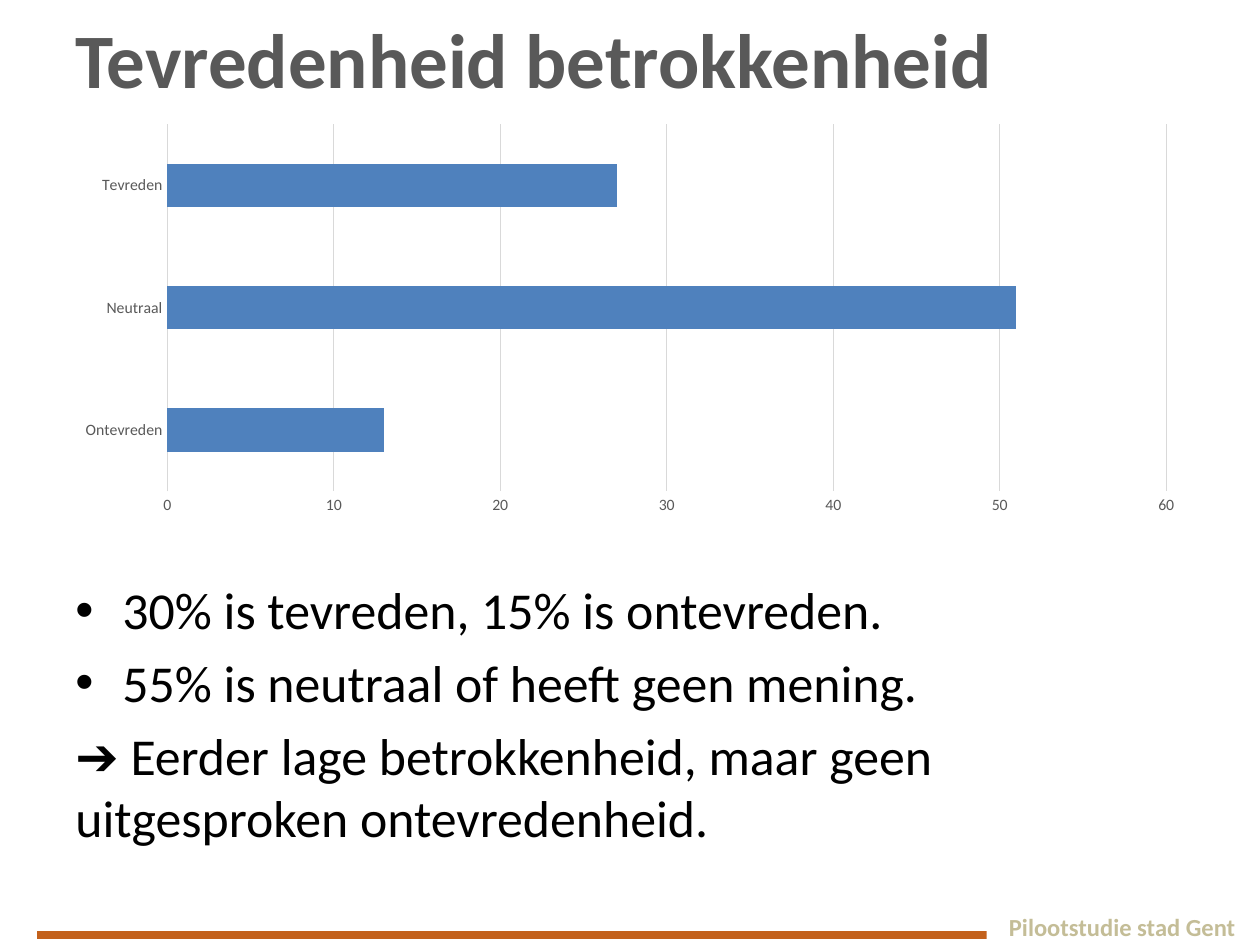
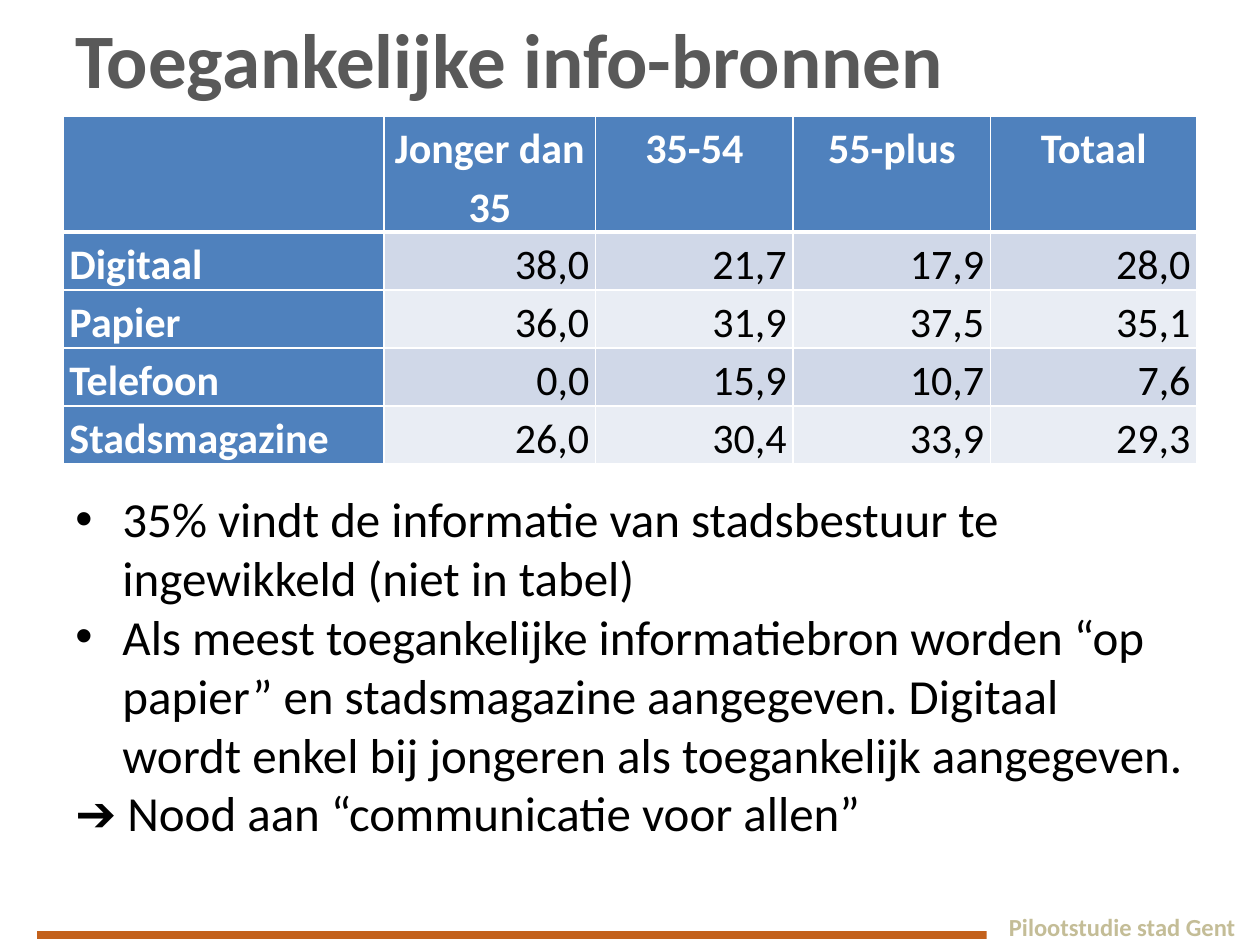
from dataclasses import dataclass

from lxml.etree import SubElement
from pptx import Presentation
from pptx.chart.data import CategoryChartData
from pptx.dml.color import RGBColor as RGB
from pptx.enum.chart import XL_CHART_TYPE as ChartType, XL_TICK_MARK as Tick
from pptx.enum.shapes import MSO_SHAPE as Shape
from pptx.enum.text import MSO_ANCHOR as Anchor, MSO_AUTO_SIZE as AutoSize, PP_ALIGN as Align
from pptx.oxml.ns import qn
from pptx.util import Cm, Pt


@dataclass(frozen=True)
class Theme:
    font: str = "Calibri"
    white: RGB = RGB(0xFF, 0xFF, 0xFF)
    black: RGB = RGB(0, 0, 0)
    grey: RGB = RGB(0x59, 0x59, 0x59)
    grid: RGB = RGB(0xD9, 0xD9, 0xD9)
    blue: RGB = RGB(0x4F, 0x81, 0xBD)
    orange: RGB = RGB(0xC3, 0x61, 0x1C)
    sand: RGB = RGB(0xC4, 0xBD, 0x97)
    bands: tuple = (RGB(0xD0, 0xD8, 0xE8), RGB(0xE9, 0xED, 0xF4))
    title_size: float = 44
    findings_size: float = 29.6
    sources_size: float = 28
    table_size: float = 24
    footer_size: float = 14
    axis_size: float = 9


theme = Theme()


def write(frame, *lines, size, color=theme.black, bold=False, align=Align.LEFT,
          anchor=Anchor.TOP, spacing=None, before=0, bullets=0, wrap=True):
    frame.word_wrap = wrap
    frame.vertical_anchor = anchor
    for index, line in enumerate(lines):
        paragraph = frame.add_paragraph() if index else frame.paragraphs[0]
        if index < bullets:
            properties = paragraph._p.get_or_add_pPr()
            properties.set("marL", str(Cm(0.95)))
            properties.set("indent", str(-Cm(0.95)))
            SubElement(properties, qn("a:buFont"), typeface="Arial")
            SubElement(properties, qn("a:buChar"), char="•")
        paragraph.alignment = align
        if spacing:
            paragraph.line_spacing = spacing
        if index and before:
            paragraph.space_before = Pt(before)
        run = paragraph.add_run()
        run.text = line
        run.font.name, run.font.size, run.font.bold = theme.font, Pt(size), bold
        run.font.color.rgb = color


def fill_cell(cell, color, borders):
    properties = cell._tc.get_or_add_tcPr()
    for side, width in zip(("L", "R", "T", "B"), borders):
        line = SubElement(properties, qn(f"a:ln{side}"), w=str(Pt(width)))
        solid = SubElement(line, qn("a:solidFill"))
        SubElement(solid, qn("a:srgbClr"), val=str(theme.white))
    cell.fill.solid()
    cell.fill.fore_color.rgb = color


deck = Presentation()
deck.slide_width, deck.slide_height = Cm(25.4), Cm(19.05)
left, content_top, content_width = Cm(1.27), Cm(2.34), Cm(22.86)

slides = []
for heading in ("Tevredenheid betrokkenheid", "Toegankelijke info-bronnen"):
    slide = deck.slides.add_slide(deck.slide_layouts[6])
    slides.append(slide)
    for x, y, width, height, color, outline in (
        (0.71, 18.72, 21.41, 0.25, theme.orange, Pt(2.25)),
        (19.89, 18.54, 4.8, 0.51, theme.white, None),
    ):
        band = slide.shapes.add_shape(Shape.RECTANGLE, Cm(x), Cm(y), Cm(width), Cm(height))
        band.shadow.inherit = False
        band.fill.solid()
        band.fill.fore_color.rgb = color
        if outline:
            band.line.color.rgb = theme.white
            band.line.width = outline
        else:
            band.line.fill.background()
    footer = slide.shapes.add_textbox(Cm(20.09), Cm(18.26), Cm(5.21), Cm(0.86)).text_frame
    write(footer, "Pilootstudie stad Gent", size=theme.footer_size, color=theme.sand,
          bold=True, wrap=False)
    footer.auto_size = AutoSize.SHAPE_TO_FIT_TEXT
    title = slide.shapes.add_textbox(left, 0, content_width, content_top).text_frame
    write(title, heading, size=theme.title_size, color=theme.grey, bold=True,
          anchor=Anchor.MIDDLE)

satisfaction_slide, sources_slide = slides

findings = satisfaction_slide.shapes.add_textbox(left, Cm(11.53), content_width, Cm(5.41))
write(findings.text_frame,
      "30% is tevreden, 15% is ontevreden.",
      "55% is neutraal of heeft geen mening.",
      "➔ Eerder lage betrokkenheid, maar geen uitgesproken ontevredenheid.",
      size=theme.findings_size, before=6, bullets=2)

satisfaction = CategoryChartData()
satisfaction.categories = ["Ontevreden", "Neutraal", "Tevreden"]
satisfaction.add_series("Series 1", (13, 51, 27))
chart = satisfaction_slide.shapes.add_chart(
    ChartType.BAR_CLUSTERED, left, content_top, content_width, Cm(8.2), satisfaction).chart
chart.has_title = chart.has_legend = False
chart.font.name, chart.font.size = theme.font, Pt(theme.axis_size)
chart.font.color.rgb = theme.grey

bars = chart.plots[0]
bars.gap_width = 182
bars.vary_by_categories = False
bars.series[0].format.fill.solid()
bars.series[0].format.fill.fore_color.rgb = theme.blue

for axis in (chart.category_axis, chart.value_axis):
    axis.major_tick_mark = axis.minor_tick_mark = Tick.NONE
chart.category_axis.has_major_gridlines = False
chart.value_axis.has_major_gridlines = True
chart.value_axis.minimum_scale, chart.value_axis.maximum_scale = 0, 60
chart.value_axis.major_unit = 10
chart.value_axis.format.line.fill.background()
for line in (chart.category_axis.format.line, chart.value_axis.major_gridlines.format.line):
    line.color.rgb = theme.grid
    line.width = Pt(0.75)

source_rows = (
    ("", "Jonger dan 35", "35-54", "55-plus", "Totaal"),
    ("Digitaal", "38,0", "21,7", "17,9", "28,0"),
    ("Papier", "36,0", "31,9", "37,5", "35,1"),
    ("Telefoon", "0,0", "15,9", "10,7", "7,6"),
    ("Stadsmagazine", "26,0", "30,4", "33,9", "29,3"),
)
table = sources_slide.shapes.add_table(
    len(source_rows), len(source_rows[0]), left, content_top, content_width, Cm(7)).table
table.first_col = True
for column, width in zip(table.columns, (6.47, 4.27, 3.98, 3.98, 4.16)):
    column.width = Cm(width)

for row, values in enumerate(source_rows):
    table.rows[row].height = Cm(1.09 if row else 2.24)
    for column, value in enumerate(values):
        cell = table.cell(row, column)
        cell.margin_left = cell.margin_right = Cm(0.13)
        cell.margin_top = cell.margin_bottom = 0
        is_label = row == 0 or column == 0
        fill_cell(cell, theme.blue if is_label else theme.bands[(row - 1) % 2],
                  (1, 1, 3 if row == 1 else 1, 1 if row else 3))
        if value:
            write(cell.text_frame, value, size=theme.table_size, bold=is_label, spacing=1.15,
                  color=theme.white if is_label else theme.black,
                  align=Align.CENTER if row == 0 else Align.RIGHT if column else Align.LEFT)
            cell.vertical_anchor = Anchor.BOTTOM if row else Anchor.TOP

conclusions = sources_slide.shapes.add_textbox(left, Cm(9.73), content_width, Cm(7.44)).text_frame
write(conclusions,
      "35% vindt de informatie van stadsbestuur te ingewikkeld (niet in tabel)",
      "Als meest toegankelijke informatiebron worden “op papier” en stadsmagazine aangegeven. "
      "Digitaal wordt enkel bij jongeren als toegankelijk aangegeven.",
      "➔ Nood aan “communicatie voor allen”",
      size=theme.sources_size, bullets=2)
conclusions.auto_size = AutoSize.SHAPE_TO_FIT_TEXT

deck.save("out.pptx")
